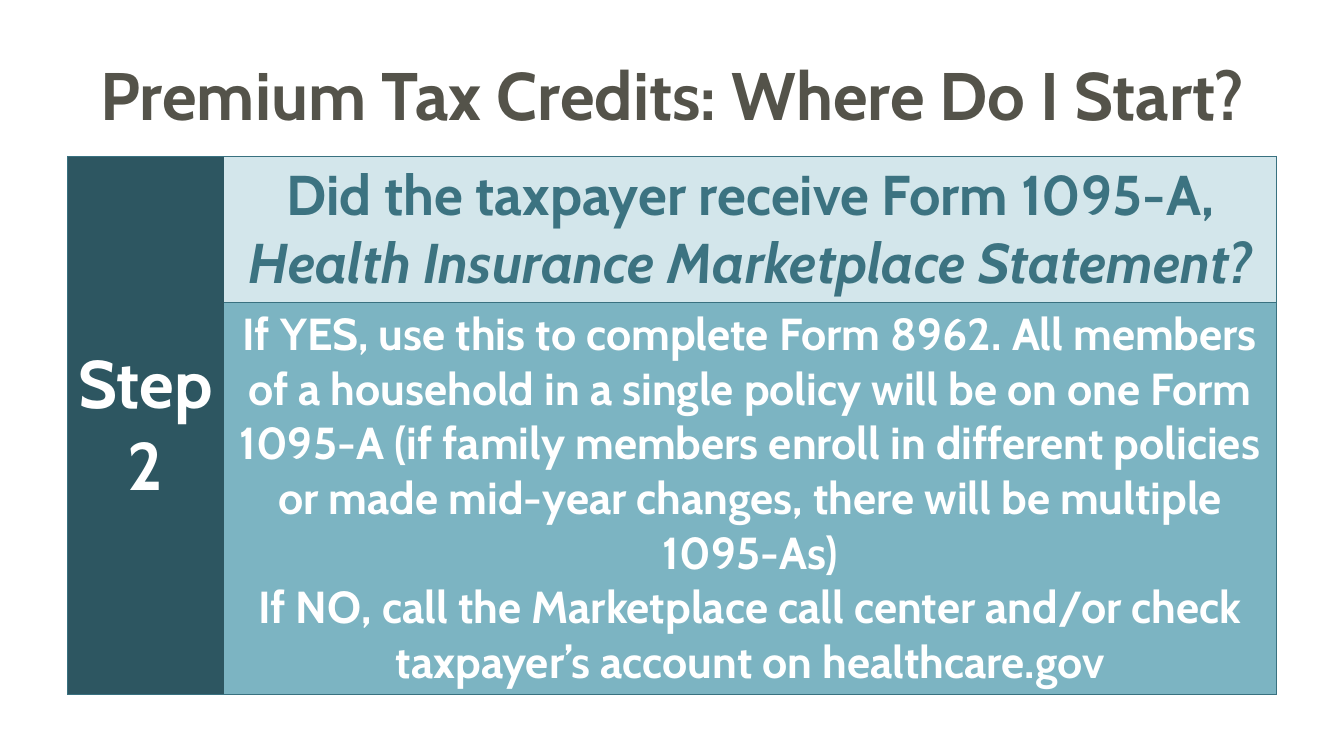
import pptx
import pptx.dml.color
import pptx.enum.text
import pptx.oxml
import pptx.oxml.ns
import pptx.util
from pptx.util import Cm, Pt

# Content
FONT = "Cabin"
BORDER = "397180"
TITLE = "Premium Tax Credits: Where Do I Start?"
STEP = [[("Step 2", False)]]
QUESTION = [[("Did the taxpayer receive Form 1095-A, ", False),
             ("Health Insurance Marketplace Statement?", True)]]
ANSWERS = [
    [("If YES, use this to complete Form 8962. All members of a household in a "
      "single policy will be on one Form 1095-A (if family members enroll in "
      "different policies or made mid-year changes, there will be multiple "
      "1095-As)", False)],
    [("If NO, call the Marketplace call center and/or check taxpayer’s account "
      "on healthcare.gov", False)],
]
# row, column, paragraphs, size, text colour, fill, bordered sides
CELLS = [
    (0, 0, STEP, 48, "FFFFFF", "2D5661", "LTB"),
    (1, 0, [], 48, "FFFFFF", "2D5661", "LB"),
    (0, 1, QUESTION, 40, "3C7381", "D3E6EB", "RTB"),
    (1, 1, ANSWERS, 32, "FFFFFF", "7CB4C2", "RTB"),
]
COLUMN_WIDTHS = [Cm(3.94), Cm(26.54)]
ROW_HEIGHTS = [Cm(3.53), Cm(9.86)]
LEFT, TITLE_TOP, TITLE_HEIGHT = Cm(1.7), Cm(0.76), Cm(3.18)


def color(value):
    return pptx.dml.color.RGBColor.from_string(value)


def write(frame, paragraphs, size, text_color):
    for index, spans in enumerate(paragraphs):
        para = frame.add_paragraph() if index else frame.paragraphs[0]
        para.alignment = pptx.enum.text.PP_ALIGN.CENTER
        for text, italic in spans:
            span = para.add_run()
            span.text = text
            if italic:
                span.font.italic = True
        para.font.name = FONT
        para.font.size = Pt(size)
        para.font.bold = True
        para.font.color.rgb = color(text_color)
        # Runs carry the same look so that it wins over inherited styles
        for span in para.runs:
            span.font.name = FONT
            span.font.size = Pt(size)
            span.font.bold = True
            span.font.color.rgb = color(text_color)


def set_borders(cell, sides):
    properties = cell._tc.get_or_add_tcPr()
    for position, side in enumerate("LRTB"):
        if side in sides:
            paint = f'<a:solidFill><a:srgbClr val="{BORDER}"/></a:solidFill>'
        else:
            paint = "<a:noFill/>"
        line = pptx.oxml.parse_xml(
            f'<a:ln{side} {pptx.oxml.ns.nsdecls("a")} w="{Pt(0.75)}">'
            f"{paint}</a:ln{side}>")
        properties.insert(position, line)


deck = pptx.Presentation()
deck.slide_width, deck.slide_height = Cm(33.87), Cm(19.05)
page = deck.slides.add_slide(deck.slide_layouts[5])
width = sum(COLUMN_WIDTHS)

# Title
title = page.shapes.title
title.left, title.top = LEFT, TITLE_TOP
title.width, title.height = width, TITLE_HEIGHT
title.text_frame.vertical_anchor = pptx.enum.text.MSO_ANCHOR.MIDDLE
write(title.text_frame, [[(TITLE, False)]], 48, "54534A")

# Step table
table = page.shapes.add_table(2, 2, LEFT, TITLE_TOP + TITLE_HEIGHT,
                              width, sum(ROW_HEIGHTS)).table
table.first_row = table.horz_banding = False
for column, column_width in zip(table.columns, COLUMN_WIDTHS):
    column.width = column_width
for row, row_height in zip(table.rows, ROW_HEIGHTS):
    row.height = row_height
table.cell(0, 0).merge(table.cell(1, 0))

for row, column, paragraphs, size, text_color, fill, sides in CELLS:
    cell = table.cell(row, column)
    cell.fill.solid()
    cell.fill.fore_color.rgb = color(fill)
    set_borders(cell, sides)
    if paragraphs is not ANSWERS:
        cell.vertical_anchor = pptx.enum.text.MSO_ANCHOR.MIDDLE
    write(cell.text_frame, paragraphs, size, text_color)

deck.save("out.pptx")
